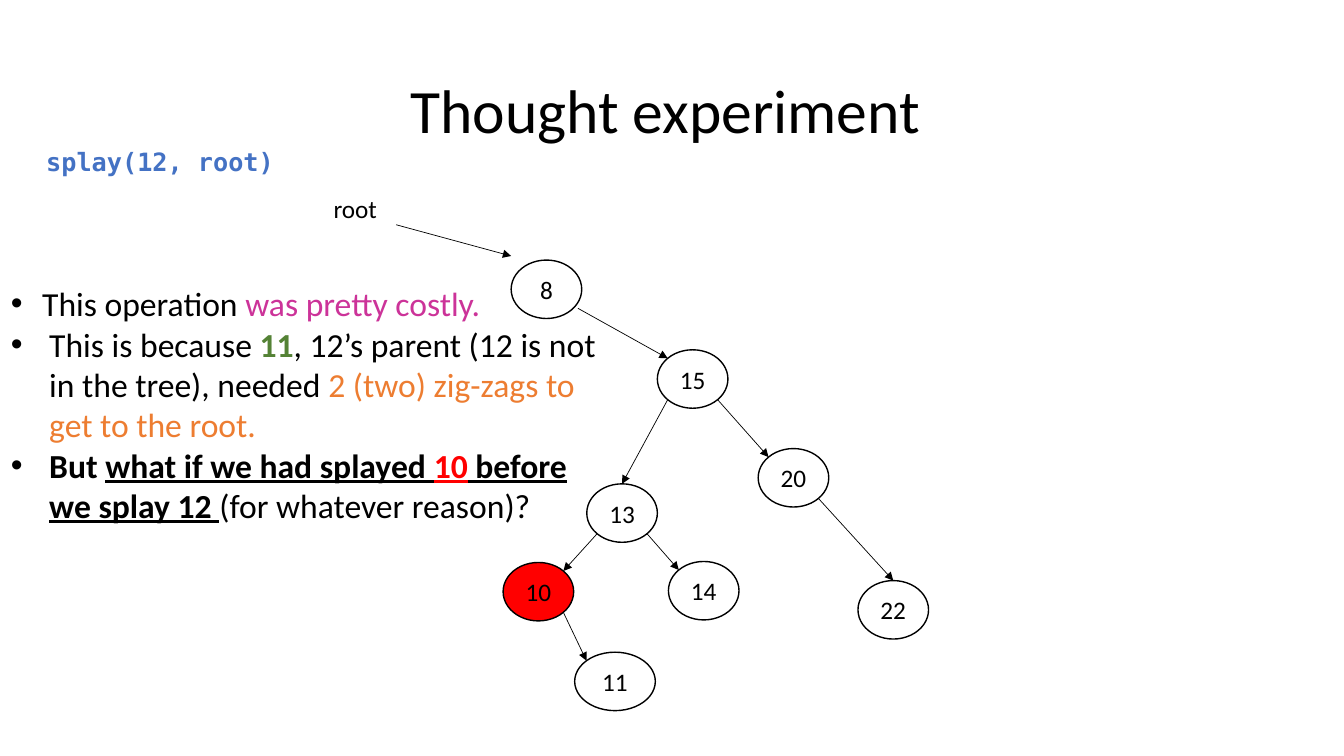
from dataclasses import dataclass
from math import sqrt

from lxml import etree
from pptx import Presentation
from pptx.dml.color import RGBColor
from pptx.enum.shapes import MSO_CONNECTOR, MSO_SHAPE
from pptx.enum.text import MSO_ANCHOR, PP_ALIGN
from pptx.oxml.ns import qn
from pptx.util import Inches, Pt

OVAL = MSO_SHAPE.OVAL
STRAIGHT = MSO_CONNECTOR.STRAIGHT
CENTER, LEFT = PP_ALIGN.CENTER, PP_ALIGN.LEFT
MIDDLE, TOP = MSO_ANCHOR.MIDDLE, MSO_ANCHOR.TOP

BODY_FONT, CODE_FONT = "Calibri", "DejaVu Sans Mono"
BLACK, RED, BLUE = "000000", "FF0000", "4472C4"
PINK, GREEN, ORANGE = "CC3399", "548235", "ED7D31"

# Points on an oval, as fractions of its half width and half height
DIAGONAL = 1 / sqrt(2)
Port = tuple[float, float]
TOP_MIDDLE: Port = (0, -1)
TOP_LEFT: Port = (-DIAGONAL, -DIAGONAL)
TOP_RIGHT: Port = (DIAGONAL, -DIAGONAL)
BOTTOM_LEFT: Port = (-DIAGONAL, DIAGONAL)
BOTTOM_RIGHT: Port = (DIAGONAL, DIAGONAL)
ROOT_EXIT: Port = (0.89, 0.65)


@dataclass
class Span:
    text: str
    color: str = BLACK
    bold: bool = False
    underline: bool = False
    size: float = 18
    font: str = BODY_FONT


@dataclass
class Bullet:
    indent: float
    spans: list[Span]


@dataclass
class Node:
    key: int
    left: float
    top: float
    width: float = 0.7
    height: float = 0.58
    fill: str | None = None

    def port(self, port: Port) -> tuple[float, float]:
        return (self.left + self.width / 2 * (1 + port[0]),
                self.top + self.height / 2 * (1 + port[1]))


@dataclass
class Edge:
    parent: int
    child: int
    leave: Port
    enter: Port


NODES = [
    Node(8, 5.07, 2.58),
    Node(15, 6.52, 3.47),
    Node(20, 7.52, 4.45),
    Node(22, 8.51, 5.76),
    Node(13, 5.82, 4.8),
    Node(10, 4.99, 5.58, fill=RED),
    Node(11, 5.7, 6.47, width=0.8),
    Node(14, 6.63, 5.57),
]

EDGES = [
    Edge(8, 15, ROOT_EXIT, TOP_LEFT),
    Edge(15, 20, BOTTOM_RIGHT, TOP_LEFT),
    Edge(20, 22, BOTTOM_RIGHT, TOP_MIDDLE),
    Edge(15, 13, BOTTOM_LEFT, TOP_MIDDLE),
    Edge(13, 10, BOTTOM_LEFT, TOP_RIGHT),
    Edge(10, 11, BOTTOM_RIGHT, TOP_LEFT),
    Edge(13, 14, BOTTOM_RIGHT, TOP_LEFT),
]

REMARKS = [
    Bullet(0.31, [Span("This operation ", size=24),
                  Span("was pretty costly.", PINK, size=24)]),
    Bullet(0.38, [Span("This is because ", size=24),
                  Span("11", GREEN, bold=True, size=24),
                  Span(", 12’s parent (12 is not in the tree), needed ", size=24),
                  Span("2 (two) zig-zags to get to the root.", ORANGE, size=24)]),
    Bullet(0.38, [Span("But ", bold=True, size=24),
                  Span("what if we had splayed ", bold=True, underline=True, size=24),
                  Span("10", RED, bold=True, underline=True, size=24),
                  Span(" before we splay 12 ", bold=True, underline=True, size=24),
                  Span("(for whatever reason)?", size=24)]),
]


def rgb(color: str) -> RGBColor:
    return RGBColor.from_string(color)


def add_spans(paragraph, spans: list[Span], align=LEFT) -> None:
    paragraph.alignment = align
    for span in spans:
        run = paragraph.add_run()
        run.text = span.text
        font = run.font
        font.name, font.size = span.font, Pt(span.size)
        font.bold, font.underline = span.bold, span.underline
        font.color.rgb = rgb(span.color)


def add_text_frame(slide, left: float, top: float, width: float, height: float,
                   anchor=TOP):
    frame = slide.shapes.add_textbox(Inches(left), Inches(top),
                                     Inches(width), Inches(height)).text_frame
    frame.word_wrap = True
    frame.vertical_anchor = anchor
    return frame


def add_bullets(frame, bullets: list[Bullet]) -> None:
    for index, bullet in enumerate(bullets):
        paragraph = frame.add_paragraph() if index else frame.paragraphs[0]
        add_spans(paragraph, bullet.spans)
        props = paragraph._p.get_or_add_pPr()
        props.set("marL", str(Inches(bullet.indent)))
        props.set("indent", str(-Inches(bullet.indent)))
        etree.SubElement(props, qn("a:buFont")).set("typeface", "Arial")
        etree.SubElement(props, qn("a:buChar")).set("char", "•")


def add_node(slide, node: Node) -> None:
    oval = slide.shapes.add_shape(OVAL, Inches(node.left), Inches(node.top),
                                  Inches(node.width), Inches(node.height))
    oval.shadow.inherit = False
    if node.fill:
        oval.fill.solid()
        oval.fill.fore_color.rgb = rgb(node.fill)
    else:
        oval.fill.background()
    oval.line.color.rgb = rgb(BLACK)
    oval.line.width = Pt(1)
    oval.text_frame.vertical_anchor = MIDDLE
    add_spans(oval.text_frame.paragraphs[0], [Span(str(node.key))], CENTER)


def add_arrow(slide, start: tuple[float, float], end: tuple[float, float]) -> None:
    arrow = slide.shapes.add_connector(STRAIGHT, Inches(start[0]), Inches(start[1]),
                                       Inches(end[0]), Inches(end[1]))
    arrow.line.color.rgb = rgb(BLACK)
    arrow.line.width = Pt(0.5)
    etree.SubElement(arrow.line._get_or_add_ln(), qn("a:tailEnd")).set("type", "triangle")
    etree.SubElement(arrow._element.spPr, qn("a:effectLst"))


def main() -> None:
    deck = Presentation()
    deck.slide_width, deck.slide_height = Inches(13.33), Inches(7.5)
    slide = deck.slides.add_slide(deck.slide_layouts[6])

    # Title
    title = add_text_frame(slide, 0.92, 0.4, 11.5, 1.45, MIDDLE).paragraphs[0]
    title.line_spacing = 0.9
    add_spans(title, [Span("Thought experiment ", size=44)], CENTER)

    # Remarks on the cost
    add_bullets(add_text_frame(slide, 0.01, 2.76, 6.12, 2.52), REMARKS)

    # Tree
    for node in NODES:
        add_node(slide, node)
    by_key = {node.key: node for node in NODES}
    for edge in EDGES:
        add_arrow(slide, by_key[edge.parent].port(edge.leave),
                  by_key[edge.child].port(edge.enter))

    # Root pointer
    root_label = add_text_frame(slide, 3.21, 1.87, 1.08, 0.4)
    add_spans(root_label.paragraphs[0], [Span("root")])
    add_arrow(slide, (3.93, 2.23), (5.07, 2.54))

    # Splay call
    call = add_text_frame(slide, 0.36, 1.4, 2.49, 0.4)
    add_spans(call.paragraphs[0],
              [Span("splay(12, root)", BLUE, bold=True, font=CODE_FONT)])

    deck.save("out.pptx")


if __name__ == "__main__":
    main()
